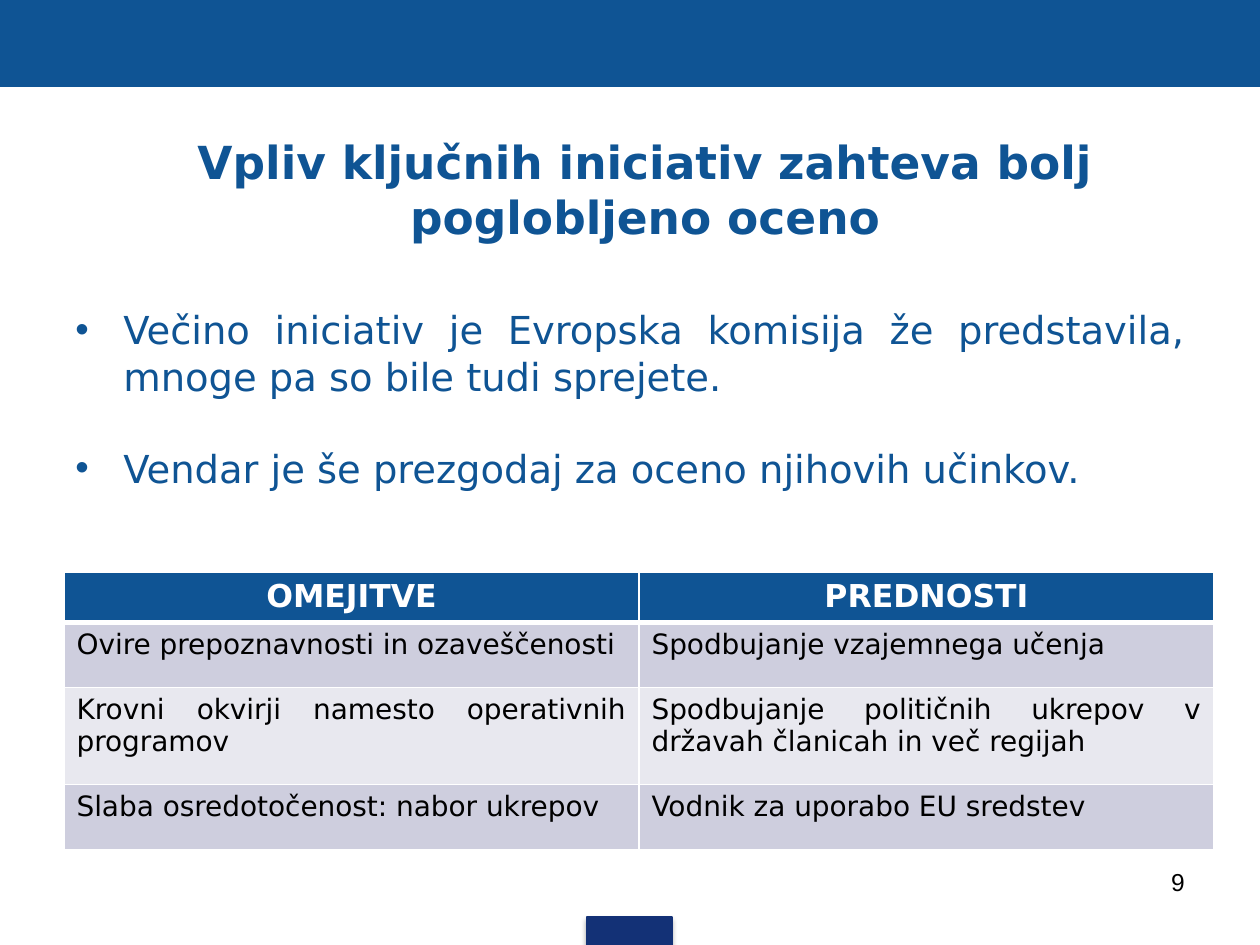
from dataclasses import dataclass

from lxml import etree
from pptx import Presentation
from pptx import util as u
from pptx.dml.color import RGBColor
from pptx.enum import shapes, text
from pptx.oxml.ns import qn

PX = 914400 / 126
FONT = "DejaVu Sans"
BLUE = RGBColor(0x0F, 0x54, 0x94)
NAVY = RGBColor(0x13, 0x31, 0x76)
WHITE = RGBColor(0xFF, 0xFF, 0xFF)
BLACK = RGBColor(0x00, 0x00, 0x00)
LILAC = RGBColor(0xCE, 0xCE, 0xDE)
PALE = RGBColor(0xE8, 0xE8, 0xEF)
LEFT, MID, RIGHT, JUST = (
    text.PP_ALIGN.LEFT, text.PP_ALIGN.CENTER,
    text.PP_ALIGN.RIGHT, text.PP_ALIGN.JUSTIFY)


@dataclass
class Box:
    x: int
    y: int
    w: int
    h: int

    def emu(self) -> list[int]:
        return [px(n) for n in (self.x, self.y, self.w, self.h)]


@dataclass
class Row:
    left: str
    right: str
    high: int


ROWS = [
    Row("OMEJITVE", "PREDNOSTI", 50),
    Row("Ovire prepoznavnosti in ozaveščenosti",
        "Spodbujanje vzajemnega učenja", 65),
    Row("Krovni okvirji namesto operativnih programov",
        "Spodbujanje političnih ukrepov v državah članicah in več regijah", 97),
    Row("Slaba osredotočenost: nabor ukrepov",
        "Vodnik za uporabo EU sredstev", 65),
]
POINTS = [
    "Večino iniciativ je Evropska komisija že predstavila, "
    "mnoge pa so bile tudi sprejete.",
    "Vendar je še prezgodaj za oceno njihovih učinkov.",
]


def px(n: int) -> int:
    return round(n * PX)


def sub(node, tag: str, **attrs):
    return etree.SubElement(node, qn(tag), {k: str(v) for k, v in attrs.items()})


def write(frame, lines: list[str], *, size: int, color: RGBColor,
          font: str = FONT, bold: bool = False, align=LEFT, indent: int = 0,
          bullet: bool = False, gap: int = 0, pitch: int | None = None) -> None:
    frame.word_wrap = True
    for i, line in enumerate(lines):
        para = frame.paragraphs[0] if i == 0 else frame.add_paragraph()
        props = para._p.get_or_add_pPr()
        props.set("marL", str(px(indent)))
        if bullet:
            props.set("indent", str(-px(indent)))
            hue = sub(props, "a:buClr")
            sub(hue, "a:srgbClr", val=color)
            sub(props, "a:buFont", typeface="Arial")
            sub(props, "a:buChar", char="•")
        para.alignment = align
        if pitch:
            para.line_spacing = u.Pt(pitch)
        if i:
            para.space_before = u.Pt(gap)
        run = para.add_run()
        run.text = line
        run.font.name = font
        run.font.size = u.Pt(size)
        run.font.bold = bold
        run.font.color.rgb = color


def label(slide, box: Box, lines: list[str], anchor=text.MSO_ANCHOR.TOP,
          **form) -> None:
    frame = slide.shapes.add_textbox(*box.emu()).text_frame
    frame.vertical_anchor = anchor
    write(frame, lines, **form)


def block(slide, box: Box, color: RGBColor):
    shape = slide.shapes.add_shape(shapes.MSO_SHAPE.RECTANGLE, *box.emu())
    shape.shadow.inherit = False
    shape.fill.solid()
    shape.fill.fore_color.rgb = color
    shape.line.color.rgb = color
    shape.line.width = u.Pt(0.75)
    return shape


def shade(shape) -> None:
    glow = shape._element.spPr.find(qn("a:effectLst"))
    cast = sub(glow, "a:outerShdw", blurRad=u.Pt(3.1), dist=u.Pt(1.8),
               dir=5400000, rotWithShape=0)
    hue = sub(cast, "a:srgbClr", val=BLACK)
    sub(hue, "a:alpha", val=35000)


def edge(cell, side: str, width: int) -> None:
    line = etree.Element(qn(f"a:ln{side}"), w=str(u.Pt(width)))
    fill = sub(line, "a:solidFill")
    sub(fill, "a:srgbClr", val=WHITE)
    props = cell._tc.get_or_add_tcPr()
    props.insert("LRTB".index(side), line)


def grid(slide, box: Box, rows: list[Row]) -> None:
    table = slide.shapes.add_table(len(rows), 2, *box.emu()).table
    for col in table.columns:
        col.width = px(box.w // 2)
    for i, row in enumerate(rows):
        table.rows[i].height = px(row.high)
        head = i == 0
        for j, words in enumerate((row.left, row.right)):
            cell = table.cell(i, j)
            cell.fill.solid()
            cell.fill.fore_color.rgb = BLUE if head else LILAC if i % 2 else PALE
            for side in "LRTB":
                thick = (head and side == "B") or (i == 1 and side == "T")
                edge(cell, side, 3 if thick else 1)
            write(cell.text_frame, [words], size=18 if head else 16,
                  color=WHITE if head else BLACK, bold=head,
                  align=MID if head else JUST)


def main() -> None:
    deck = Presentation()
    deck.slide_width, deck.slide_height = px(1260), px(945)
    slide = deck.slides.add_slide(deck.slide_layouts[6])
    block(slide, Box(0, 0, 1260, 86), BLUE)
    shade(block(slide, Box(587, 917, 85, 28), NAVY))
    label(slide, Box(54, 125, 1134, 128),
          ["Vpliv ključnih iniciativ zahteva bolj poglobljeno oceno"],
          anchor=text.MSO_ANCHOR.MIDDLE, size=26, color=BLUE, bold=True,
          align=MID, indent=49)
    label(slide, Box(903, 861, 294, 65), ["9"], size=14, color=BLACK,
          font="Arial", align=RIGHT)
    label(slide, Box(63, 299, 1134, 200), POINTS, size=22, color=BLUE,
          align=JUST, indent=48, bullet=True, gap=25, pitch=27)
    grid(slide, Box(64, 572, 1150, 277), ROWS)
    deck.save("out.pptx")


if __name__ == "__main__":
    main()
